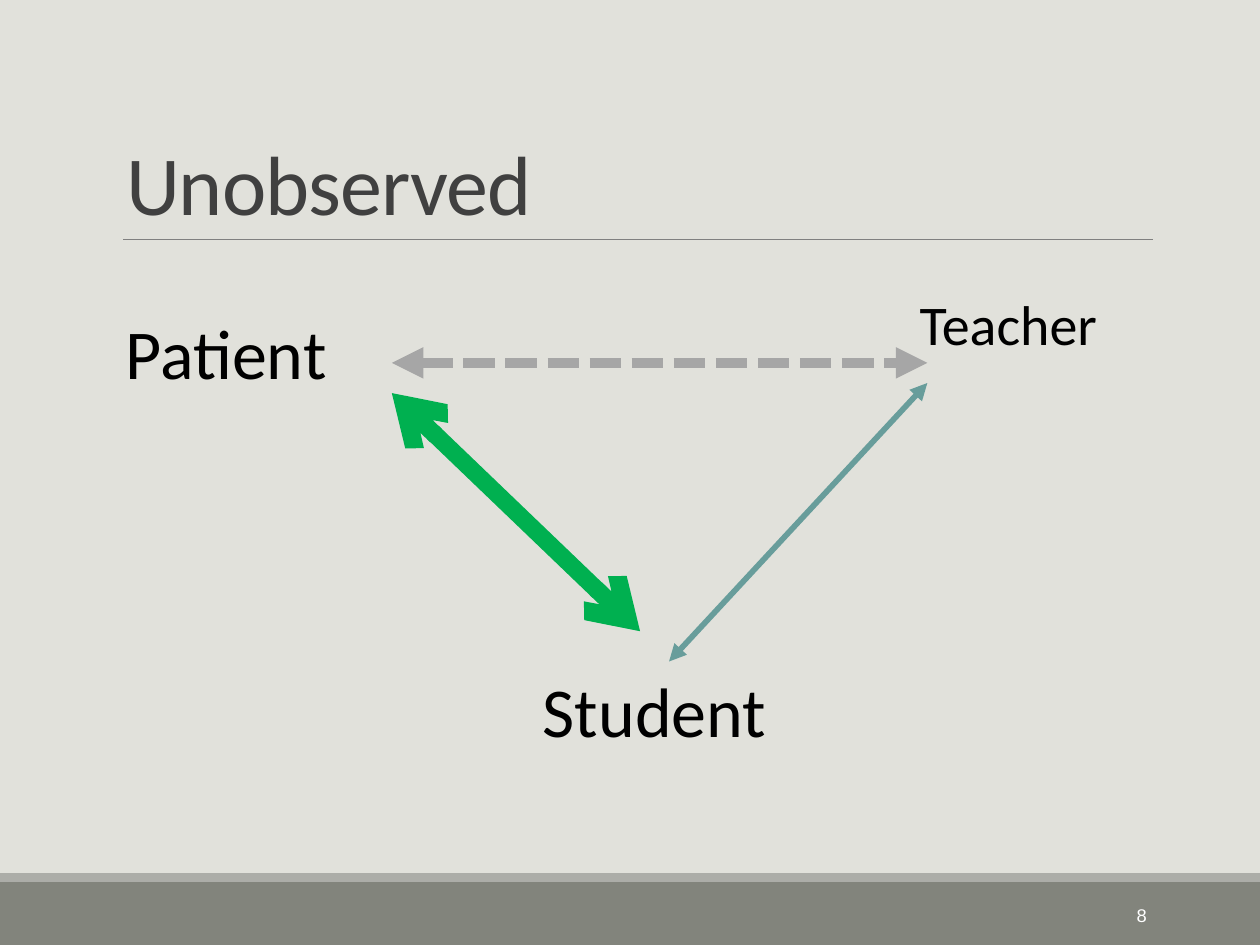
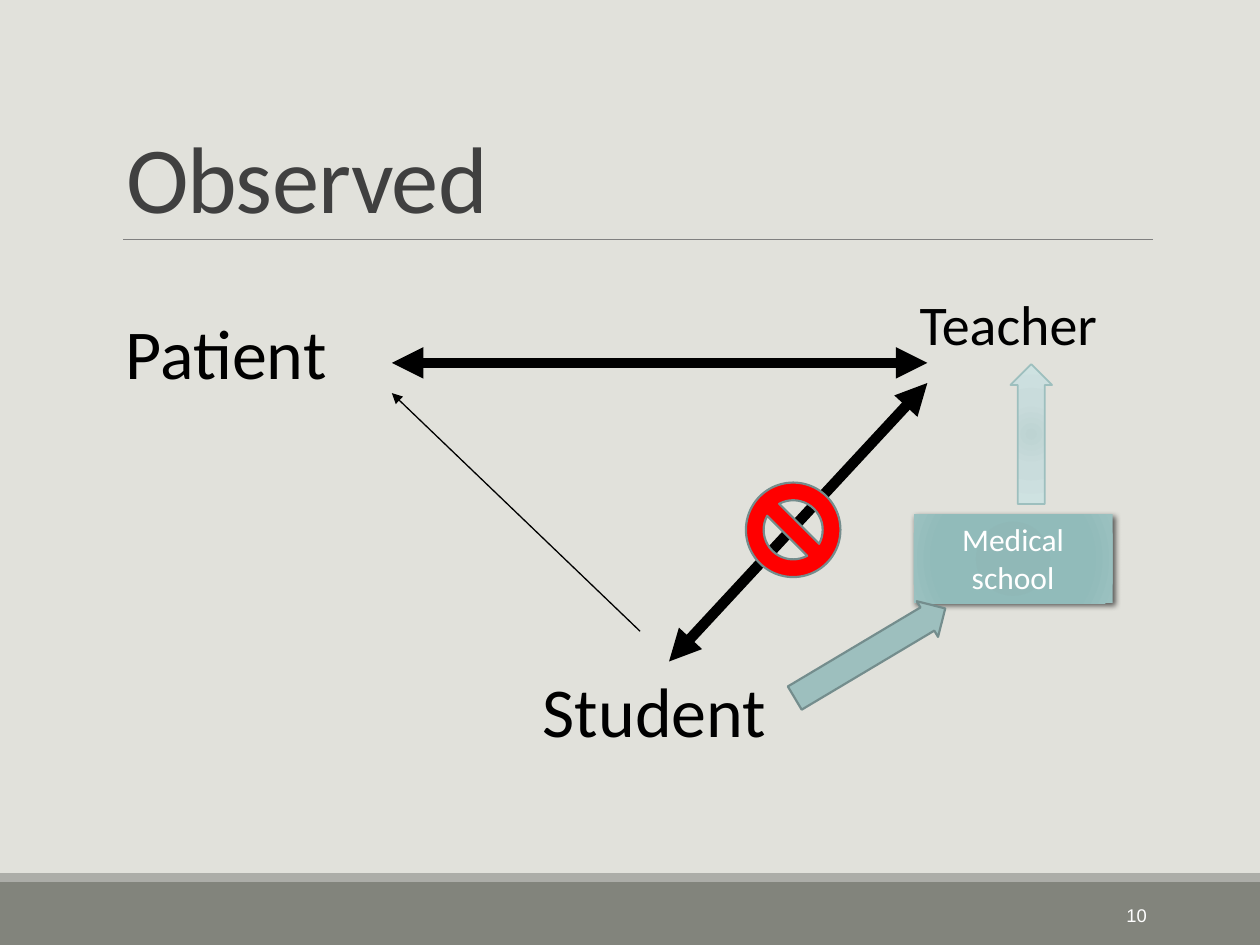
from pptx import Presentation
from pptx.dml.color import RGBColor
from pptx.enum.shapes import MSO_CONNECTOR, MSO_SHAPE as SHAPE
from pptx.enum.text import MSO_ANCHOR as ANCHOR, MSO_AUTO_SIZE as FIT, PP_ALIGN as ALIGN
from pptx.oxml import parse_xml
from pptx.oxml.ns import nsdecls, qn
from pptx.util import Inches, Pt
from lxml.etree import SubElement

COLORS = {
    "background": "E1E1DB", "band": "82847C", "band_edge": "ACADA8",
    "rule": "808080", "title": "404040", "black": "000000", "white": "FFFFFF",
    "teal": "689D9B", "teal_pale": "9DBFBE", "teal_edge": "748D8D",
    "gray": "A6A6A6", "green": "00B050", "red": "FF0000",
}
SCHOOL_STOPS = {0: "8EB7B6", 34: "90B8B7", 70: "91BBBA", 100: "9BC1C0"}
ARROW_STOPS = {0: "BDD3D2", 45: "C9DCDC", 100: "CEE2E1"}
COLS, ROWS = 100, 75

# Ends of the triangle's three sides, in columns and rows
TEACHER_STUDENT = (73.6, 30.4, 53.1, 52.5)
PATIENT_TEACHER = (31.1, 28.8, 73.6, 28.8)
STUDENT_PATIENT = (50.8, 50.1, 31.1, 31.2)
BLOCK_ARROW = (0.651, 0.5)


def rgb(name):
    return RGBColor.from_string(COLORS[name])


def write(shape, text, size=40, color="black", font="Calibri", align=ALIGN.LEFT,
          anchor=ANCHOR.TOP, fit=FIT.NONE, line_spacing=None, tracking=None):
    """Put one formatted paragraph in a shape; tracking is in points."""
    tf = shape.text_frame
    tf.word_wrap = True
    tf.auto_size = fit
    tf.vertical_anchor = anchor
    p = tf.paragraphs[0]
    p.alignment = align
    p.line_spacing = line_spacing
    r = p.add_run()
    r.text = text
    r.font.name, r.font.size, r.font.color.rgb = font, Pt(size), rgb(color)
    if tracking is not None:
        r.font._element.set("spc", str(round(tracking * 100)))


class Deck:
    """Holds the shared style and the slide being built."""

    def __init__(self):
        self.prs = Presentation()
        self.prs.slide_width, self.prs.slide_height = Inches(10), Inches(7.5)
        fill = self.prs.slide_master.background.fill
        fill.solid()
        fill.fore_color.rgb = rgb("background")

    def grid(self, x, y, *more):
        """Turn alternating column and row numbers into lengths."""
        units = (self.prs.slide_width / COLS, self.prs.slide_height / ROWS)
        return [round(n * units[i % 2]) for i, n in enumerate((x, y, *more))]

    def start_slide(self, title, number, title_size):
        self.slide = self.prs.slides.add_slide(self.prs.slide_layouts[5])
        self.shape(SHAPE.RECTANGLE, (0, 70, 100, 5), "band")
        self.shape(SHAPE.RECTANGLE, (0, 69.3, 100, 0.7), "band_edge")
        self.line((9.8, 19, 91.5, 19), "rule", 0.5)
        self.text(str(number), (81.2, 70.6, 10.8, 4), size=10.5, color="white",
                  font="Arial", align=ALIGN.RIGHT, anchor=ANCHOR.MIDDLE)
        sp = self.slide.shapes.title
        sp.left, sp.top, sp.width, sp.height = self.grid(9, 3.1, 82.5, 15.9)
        write(sp, title, size=title_size, color="title", anchor=ANCHOR.BOTTOM,
              line_spacing=0.85, tracking=-0.5)

    def text(self, text, box, **style):
        sp = self.slide.shapes.add_textbox(*self.grid(*box))
        write(sp, text, **style)

    def line(self, ends, color, width, head=None, tail=None, dash=None):
        sp = self.slide.shapes.add_connector(MSO_CONNECTOR.STRAIGHT, *self.grid(*ends))
        sp.line.color.rgb, sp.line.width = rgb(color), Pt(width)
        ln = sp.line._get_or_add_ln()
        for tag, key, value in (("a:prstDash", "val", dash), ("a:headEnd", "type", head),
                                ("a:tailEnd", "type", tail)):
            if value:
                SubElement(ln, qn(tag)).set(key, value)
        SubElement(ln.getparent(), qn("a:effectLst"))

    def shape(self, kind, box, fill, edge=None, edge_width=1.25, rotation=0, adjust=()):
        """Add a preset shape; fill is a color name or a dict of radial stops."""
        sp = self.slide.shapes.add_shape(kind, *self.grid(*box))
        sp.rotation = rotation
        sp.shadow.inherit = False
        for i, value in enumerate(adjust):
            sp.adjustments[i] = value
        if isinstance(fill, dict):
            self.radial_fill(sp, fill)
        else:
            sp.fill.solid()
            sp.fill.fore_color.rgb = rgb(fill)
        if edge:
            sp.line.color.rgb, sp.line.width = rgb(edge), Pt(edge_width)
        else:
            sp.line.fill.background()
        return sp

    def radial_fill(self, sp, stops):
        sp.fill.background()
        sp_pr = sp._element.spPr
        gs = "".join(f'<a:gs pos="{pos * 1000}"><a:srgbClr val="{color}"/></a:gs>'
                     for pos, color in stops.items())
        sp_pr.replace(sp_pr.find(qn("a:noFill")), parse_xml(
            f'<a:gradFill {nsdecls("a")} rotWithShape="1"><a:gsLst>{gs}</a:gsLst>'
            '<a:path path="circle"><a:fillToRect l="100000" t="100000" r="100000"'
            ' b="100000"/></a:path></a:gradFill>'))

    def drop_shadow(self, sp):
        sp._element.spPr.find(qn("a:effectLst")).append(parse_xml(
            f'<a:outerShdw {nsdecls("a")} blurRad="{Pt(3.5)}" dist="{Pt(2)}"'
            f' dir="2700000" algn="tl" rotWithShape="0"><a:srgbClr val="{COLORS["black"]}">'
            '<a:alpha val="60000"/></a:srgbClr></a:outerShdw>'))

    def people(self):
        for name, x, y, height, size in (("Teacher", 72, 22.5, 6.3, 32),
                                         ("Patient", 9, 24.1, 7.7, 40),
                                         ("Student", 42.1, 52.5, 7.7, 40)):
            self.text(name, (x, y, 21.3, height), size=size, fit=FIT.SHAPE_TO_FIT_TEXT)


def unobserved(deck):
    deck.start_slide("Unobserved", 8, 48)
    deck.line(TEACHER_STUDENT, "teal", 3.25, "triangle", "triangle")
    deck.line(PATIENT_TEACHER, "gray", 6, "triangle", "triangle", dash="sysDash")
    deck.line(STUDENT_PATIENT, "green", 10, "arrow", "arrow")
    deck.people()


def observed(deck):
    deck.start_slide("Observed", 10, 54)
    for side in (TEACHER_STUDENT, PATIENT_TEACHER):
        deck.line(side, "black", 6, "triangle", "triangle")
    deck.line(STUDENT_PATIENT, "black", 0.75, tail="triangle")
    deck.people()
    school = deck.shape(SHAPE.RECTANGLE, (72.5, 40.8, 15.8, 7.1), SCHOOL_STOPS)
    deck.drop_shadow(school)
    write(school, "Medical school", size=18, color="white", align=ALIGN.CENTER,
          fit=FIT.SHAPE_TO_FIT_TEXT)
    deck.shape(SHAPE.RIGHT_ARROW, (62.1, 50.2, 13.9, 3.3), "teal_pale", "teal_edge",
               rotation=329.2, adjust=BLOCK_ARROW)
    deck.shape(SHAPE.RIGHT_ARROW, (76.3, 32.8, 11.1, 3.3), ARROW_STOPS, "teal_pale", 1,
               rotation=270, adjust=BLOCK_ARROW)
    deck.shape(SHAPE.NO_SYMBOL, (59.2, 38.3, 7.5, 7.5), "red", "teal_edge")


def main():
    deck = Deck()
    unobserved(deck)
    observed(deck)
    deck.prs.save("out.pptx")


if __name__ == "__main__":
    main()
